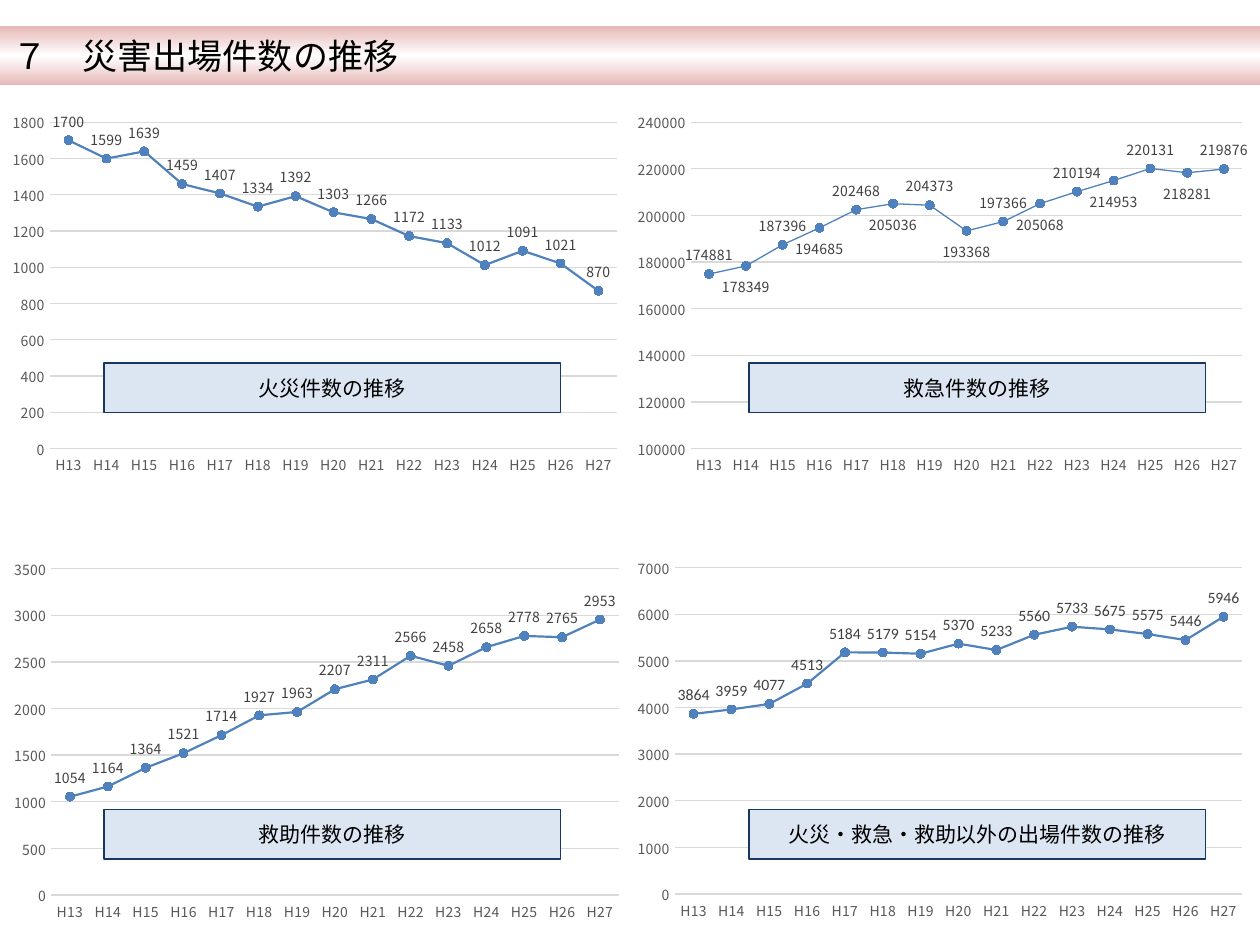
"""Build the slide of disaster dispatch trends with four line charts."""
import copy
from dataclasses import dataclass, field
from typing import Any

import pptx
import pptx.chart.data
import pptx.dml.color
import pptx.enum.chart
import pptx.enum.text
import pptx.oxml.ns
import pptx.util
from lxml import etree

Cm = pptx.util.Cm
Pt = pptx.util.Pt
LabelPosition = pptx.enum.chart.XL_LABEL_POSITION
TickMark = pptx.enum.chart.XL_TICK_MARK

FONT = "Noto Sans CJK JP"
BLUE, GRID, AXIS_TEXT, LABEL_TEXT = "4F81BD", "D9D9D9", "595959", "404040"
YEARS = [f"H{year}" for year in range(13, 28)]
CHART_SIZE = (Cm(12.7), Cm(7.62))
CAPTION_SIZE = (Cm(9.2), Cm(1))


@dataclass
class Trend:
    caption: str
    chart_at: tuple[float, float]
    caption_at: tuple[float, float]
    values: list[int]
    line_width: float = 1.25
    label_font: str = FONT
    label_size: float = 8
    scale: dict[str, int] = field(default_factory=dict)
    below: range = range(0)


TRENDS = [
    Trend("救助件数の推移", (0.03, 11.1), (2.1, 16.32),
          [1054, 1164, 1364, 1521, 1714, 1927, 1963, 2207,
           2311, 2566, 2458, 2658, 2778, 2765, 2953]),
    Trend("火災・救急・救助以外の出場件数の推移", (12.6, 11.08), (15.1, 16.32),
          [3864, 3959, 4077, 4513, 5184, 5179, 5154, 5370,
           5233, 5560, 5733, 5675, 5575, 5446, 5946],
          label_font="Calibri", label_size=9),
    Trend("火災件数の推移", (0, 2.1), (2.1, 7.32),
          [1700, 1599, 1639, 1459, 1407, 1334, 1392, 1303,
           1266, 1172, 1133, 1012, 1091, 1021, 870]),
    Trend("救急件数の推移", (12.6, 2.1), (15.1, 7.32),
          [174881, 178349, 187396, 194685, 202468, 205036, 204373, 193368,
           197366, 205068, 210194, 214953, 220131, 218281, 219876],
          line_width=0.75, below=range(1, 15, 2),
          scale={"minimum_scale": 100000, "maximum_scale": 240000,
                 "major_unit": 20000}),
]


def rgb(value: str) -> pptx.dml.color.RGBColor:
    return pptx.dml.color.RGBColor.from_string(value)


def assign(target: Any, values: dict[str, Any]) -> None:
    for name, value in values.items():
        setattr(target, name, value)


def style_font(font: Any, size: float, color: str, name: str = FONT) -> None:
    assign(font, {"size": Pt(size), "name": name, "bold": False})
    font.color.rgb = rgb(color)


def style_line(line: Any, color: str, width: float) -> None:
    line.color.rgb = rgb(color)
    line.width = Pt(width)


def paint(fill: Any, color: str) -> None:
    fill.solid()
    fill.fore_color.rgb = rgb(color)


def write(shape: Any, text: str, size: float, align: Any) -> None:
    frame = shape.text_frame
    assign(frame, {"word_wrap": True,
                   "auto_size": pptx.enum.text.MSO_AUTO_SIZE.NONE,
                   "vertical_anchor": pptx.enum.text.MSO_ANCHOR.MIDDLE})
    para = frame.paragraphs[0]
    para.alignment = align
    span = para.add_run()
    span.text = text
    style_font(span.font, size, "000000")
    east_asian = etree.SubElement(span.font._element, pptx.oxml.ns.qn("a:ea"))
    east_asian.set("typeface", FONT)


def add_title(slide: Any) -> None:
    title = slide.shapes.title
    assign(title, {"left": 0, "top": Cm(0.53),
                   "width": Cm(25.4), "height": Cm(1.19)})
    write(title, "７\u3000災害出場件数の推移", 20, pptx.enum.text.PP_ALIGN.LEFT)
    title.fill.gradient()
    title.fill.gradient_angle = 90
    stop_list = title._element.spPr.find(".//" + pptx.oxml.ns.qn("a:gsLst"))
    stop_list.append(copy.deepcopy(stop_list[-1]))
    colors = ("E6B9B8", "FFFFFF", "E6B9B8")
    for index, (stop, color) in enumerate(zip(title.fill.gradient_stops, colors)):
        stop.position = index / 2
        stop.color.rgb = rgb(color)


def style_axes(chart: Any, scale: dict[str, int]) -> None:
    for axis in (chart.category_axis, chart.value_axis):
        assign(axis, {"major_tick_mark": TickMark.NONE,
                      "minor_tick_mark": TickMark.NONE})
        style_font(axis.tick_labels.font, 8, AXIS_TEXT)
    style_line(chart.category_axis.format.line, GRID, 0.75)
    chart.value_axis.format.line.fill.background()
    style_line(chart.value_axis.major_gridlines.format.line, GRID, 0.75)
    assign(chart.value_axis, scale)


def style_series(series: Any, trend: Trend) -> None:
    series.smooth = False
    style_line(series.format.line, BLUE, trend.line_width)
    assign(series.marker, {"style": pptx.enum.chart.XL_MARKER_STYLE.CIRCLE,
                           "size": 5})
    paint(series.marker.format.fill, BLUE)
    style_line(series.marker.format.line, BLUE, 0.75)
    labels = series.data_labels
    assign(labels, {"show_value": True, "position": LabelPosition.ABOVE})
    style_font(labels.font, trend.label_size, LABEL_TEXT, trend.label_font)
    for index in trend.below:
        label = series.points[index].data_label
        style_font(label.font, trend.label_size, LABEL_TEXT, trend.label_font)
        label.position = LabelPosition.BELOW


def add_trend_chart(slide: Any, trend: Trend) -> None:
    data = pptx.chart.data.CategoryChartData()
    data.categories = YEARS
    data.add_series("Series 1", trend.values)
    chart = slide.shapes.add_chart(
        pptx.enum.chart.XL_CHART_TYPE.LINE_MARKERS,
        *map(Cm, trend.chart_at), *CHART_SIZE, data).chart
    assign(chart, {"has_title": False, "has_legend": False})
    style_font(chart.font, 10, "000000", "Calibri")
    chart.plots[0].vary_by_categories = False
    style_axes(chart, trend.scale)
    style_series(chart.plots[0].series[0], trend)


def add_caption(slide: Any, trend: Trend) -> None:
    box = slide.shapes.add_shape(
        pptx.enum.shapes.MSO_SHAPE.RECTANGLE,
        *map(Cm, trend.caption_at), *CAPTION_SIZE)
    box.shadow.inherit = False
    paint(box.fill, "DCE6F2")
    style_line(box.line, "17375E", 0.75)
    write(box, trend.caption, 12, pptx.enum.text.PP_ALIGN.CENTER)


def main() -> None:
    deck = pptx.Presentation()
    assign(deck, {"slide_width": Cm(25.4), "slide_height": Cm(19.05)})
    slide = deck.slides.add_slide(deck.slide_layouts[5])
    for trend in TRENDS:
        add_trend_chart(slide, trend)
    add_title(slide)
    for trend in TRENDS:
        add_caption(slide, trend)
    deck.save("out.pptx")


if __name__ == "__main__":
    main()
